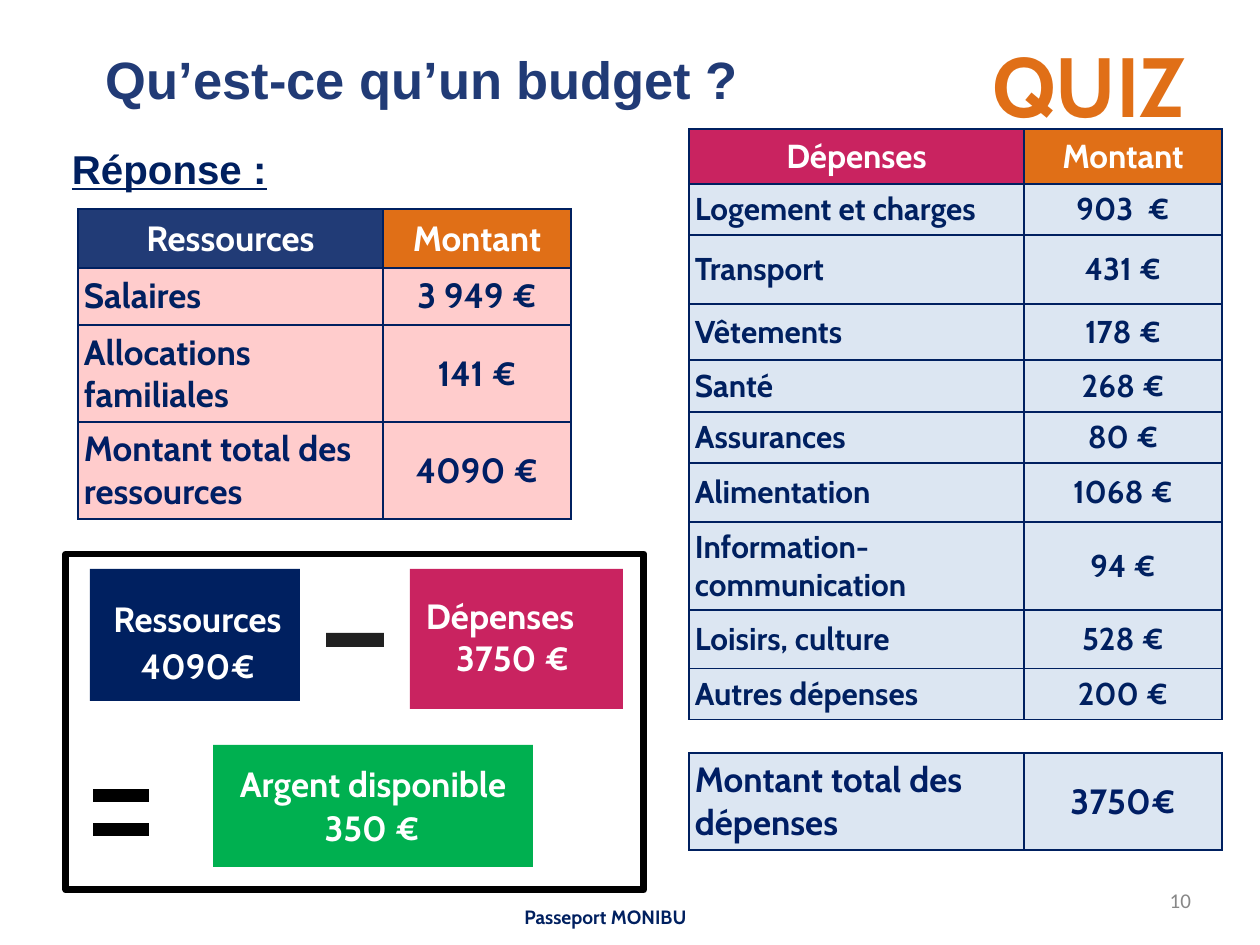
from lxml import etree
from pptx import Presentation
from pptx.dml.color import RGBColor
from pptx.enum.shapes import MSO_SHAPE
from pptx.enum.text import MSO_ANCHOR, MSO_AUTO_SIZE, PP_ALIGN
from pptx.oxml.ns import qn
from pptx.util import Emu, Pt

EMU_PER_PX = 914400 / 126
INSET = 6

NAVY = RGBColor(0x00, 0x20, 0x60)
TOTAL_NAVY = RGBColor(0x00, 0x1E, 0x64)
BLUE = RGBColor(0x21, 0x3B, 0x76)
ORANGE = RGBColor(0xE0, 0x6F, 0x17)
PINK = RGBColor(0xC9, 0x23, 0x60)
GREEN = RGBColor(0x00, 0xB0, 0x50)
ROSE = RGBColor(0xFF, 0xCC, 0xCC)
PALE_BLUE = RGBColor(0xDC, 0xE6, 0xF2)
CHARCOAL = RGBColor(0x21, 0x21, 0x21)
GREY = RGBColor(0x88, 0x88, 0x88)
BLACK = RGBColor(0, 0, 0)
WHITE = RGBColor(0xFF, 0xFF, 0xFF)

LEFT, CENTER, RIGHT = PP_ALIGN.LEFT, PP_ALIGN.CENTER, PP_ALIGN.RIGHT
TOP, MIDDLE = MSO_ANCHOR.TOP, MSO_ANCHOR.MIDDLE
FIT_SHAPE = MSO_AUTO_SIZE.SHAPE_TO_FIT_TEXT
RECTANGLE = MSO_SHAPE.RECTANGLE

RESOURCE_COLUMNS = (305, 188)
EXPENSE_COLUMNS = (335, 198)
RESOURCES = [
    ("Ressources", "Montant"),
    ("Salaires", "3 949 €"),
    ("Allocations familiales", "141 €"),
]
EXPENSES = [
    ("Dépenses", "Montant"),
    ("Logement et charges", "903  €"),
    ("Transport", "431 €"),
    ("Vêtements", "178 €"),
    ("Santé", "268 €"),
    ("Assurances", "80 €"),
    ("Alimentation", "1068 €"),
    ("Information-communication", "94 €"),
    ("Loisirs, culture", "528 €"),
    ("Autres dépenses", "200 €"),
]


def px(length):
    return Emu(round(length * EMU_PER_PX))


def style_paragraph(para, size, color, align, font="Cabin", bold=True):
    para.alignment = align
    for span in para.runs:
        span.font.name = font
        span.font.size = Pt(size)
        span.font.bold = bold
        span.font.color.rgb = color


def set_margins(target):
    target.margin_left = target.margin_right = px(INSET)
    target.margin_top = target.margin_bottom = px(INSET)


def add_text(page, text, bounds, size, color=WHITE, align=CENTER, anchor=MIDDLE,
             font="Cabin", bold=True, wrap=True):
    box = page.shapes.add_textbox(*map(px, bounds))
    frame = box.text_frame
    frame.text = text
    frame.word_wrap = wrap
    frame.auto_size = FIT_SHAPE
    frame.vertical_anchor = anchor
    set_margins(frame)
    style_paragraph(frame.paragraphs[0], size, color, align, font, bold)
    return frame


def add_block(page, bounds, color):
    block = page.shapes.add_shape(RECTANGLE, *map(px, bounds))
    block.shadow.inherit = False
    block.fill.solid()
    block.fill.fore_color.rgb = color
    block.line.fill.background()


def add_frame(page, bounds):
    frame = page.shapes.add_shape(RECTANGLE, *map(px, bounds))
    frame.shadow.inherit = False
    frame.fill.background()
    frame.line.color.rgb = BLACK
    frame.line.width = Pt(4)


def add_equals_sign(page, left, top, width, bar_height, pitch):
    """Draw two equal bars as one outline, pitch apart."""
    right = left + width
    builder = page.shapes.build_freeform(left, top, scale=EMU_PER_PX)
    for bar_top in (top, top + pitch):
        bottom = bar_top + bar_height
        if bar_top != top:
            builder.move_to(left, bar_top)
        builder.add_line_segments(
            [(right, bar_top), (right, bottom), (left, bottom)], close=True)
    sign = builder.convert_to_shape()
    sign.shadow.inherit = False
    sign.fill.solid()
    sign.fill.fore_color.rgb = BLACK
    sign.line.color.rgb = WHITE
    sign.line.width = Pt(2)


def add_borders(cell):
    properties = cell._tc.get_or_add_tcPr()
    for side in ("a:lnL", "a:lnR", "a:lnT", "a:lnB"):
        line = etree.SubElement(properties, qn(side), w=str(Pt(1)))
        fill = etree.SubElement(line, qn("a:solidFill"))
        etree.SubElement(fill, qn("a:srgbClr"), val=str(NAVY))


def fill_cell(cell, text, size, color, align, background):
    cell.text = text
    cell.vertical_anchor = MIDDLE
    set_margins(cell)
    add_borders(cell)
    cell.fill.solid()
    cell.fill.fore_color.rgb = background
    style_paragraph(cell.text_frame.paragraphs[0], size, color, align)


def add_budget_table(page, left, top, widths, heights, rows, background,
                     size=20, color=NAVY, header_color=None, header_size=20):
    """Add label and amount columns; the first row is a header if header_color is given."""
    table = page.shapes.add_table(
        len(rows), len(widths), px(left), px(top),
        px(sum(widths)), px(sum(heights))).table
    table.first_row = table.horz_banding = False
    for column, width in zip(table.columns, widths):
        column.width = px(width)
    for index, (row, height) in enumerate(zip(table.rows, heights)):
        row.height = px(height)
        label, amount = row.cells
        label_text, amount_text = rows[index]
        if index == 0 and header_color is not None:
            fill_cell(label, label_text, header_size, WHITE, CENTER, header_color)
            fill_cell(amount, amount_text, header_size, WHITE, CENTER, ORANGE)
        else:
            fill_cell(label, label_text, size, color, LEFT, background)
            fill_cell(amount, amount_text, size, color, CENTER, background)


def add_headings(page):
    add_text(page, "QUIZ", (986, 28, 221, 115), 48, ORANGE, LEFT, TOP)
    title = add_text(page, "Qu’est-ce qu’un budget ?", (85, 41, 753, 77), 30,
                     BLUE, LEFT, TOP, "Arial")
    title.margin_left = px(INSET + 15)
    answer = add_text(page, "Réponse :", (66, 138, 212, 58), 23,
                      NAVY, LEFT, TOP, "Arial")
    answer.paragraphs[0].space_before = Pt(5)
    answer.paragraphs[0].runs[0].font.underline = True


def add_tables(page):
    add_budget_table(page, 689, 129, EXPENSE_COLUMNS,
                     (55, 51, 69, 56, 52, 51, 59, 88, 59, 51), EXPENSES, PALE_BLUE,
                     size=18, header_color=PINK, header_size=19)
    add_budget_table(page, 689, 753, EXPENSE_COLUMNS, (97,),
                     [("Montant total des dépenses", "3750€")], PALE_BLUE,
                     color=TOTAL_NAVY)
    add_budget_table(page, 78, 209, RESOURCE_COLUMNS, (59, 57, 98), RESOURCES, ROSE,
                     header_color=BLUE)
    add_budget_table(page, 78, 422, RESOURCE_COLUMNS, (97,),
                     [("Montant total des ressources", "4090 €")], ROSE,
                     color=TOTAL_NAVY)


def add_calculation(page):
    add_block(page, (90, 569, 210, 132), NAVY)
    add_block(page, (410, 569, 213, 140), PINK)
    add_block(page, (326, 633, 58, 14), CHARCOAL)
    add_block(page, (213, 745, 320, 122), GREEN)
    add_equals_sign(page, 91, 787, 60, 17, 34)
    add_frame(page, (66, 554, 578, 336))
    add_text(page, "Ressources", (70, 591, 255, 55), 20)
    add_text(page, "4090€", (113, 638, 170, 55), 20)
    add_text(page, "Dépenses", (420, 588, 203, 55), 20, align=LEFT, anchor=TOP)
    add_text(page, "3750 €", (420, 630, 185, 55), 20)
    add_text(page, "Argent disponible", (200, 756, 346, 55), 20)
    add_text(page, "350 €", (287, 800, 170, 55), 20)


def add_footer(page):
    add_text(page, "Passeport MONIBU", (406, 898, 399, 37), 11, NAVY)
    add_text(page, "10", (1160, 882, 37, 37), 12, GREY, RIGHT,
             font="Calibri", bold=False, wrap=False)


def main():
    deck = Presentation()
    deck.slide_width, deck.slide_height = px(1260), px(945)
    page = deck.slides.add_slide(deck.slide_layouts[6])
    add_headings(page)
    add_tables(page)
    add_calculation(page)
    add_footer(page)
    deck.save("out.pptx")


if __name__ == "__main__":
    main()
